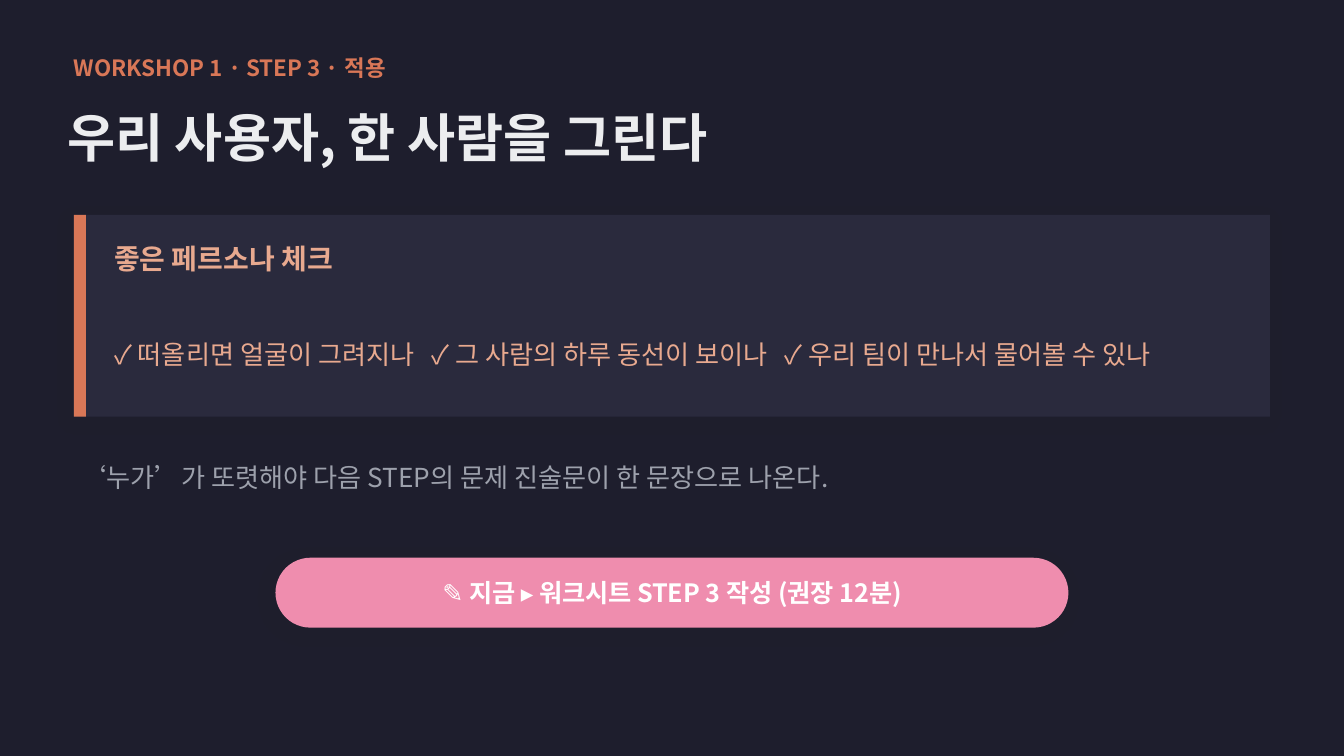
from lxml.etree import SubElement
from pptx import Presentation
from pptx.dml.color import RGBColor
from pptx.enum.shapes import MSO_SHAPE
from pptx.enum.text import MSO_ANCHOR, PP_ALIGN
from pptx.oxml.ns import qn
from pptx.util import Pt

FONT = "Noto Sans CJK KR"
ORANGE, PEACH = "D97757", "E8A98F"
LEFT = 39.6
CARD_TOP, CARD_HEIGHT = 115.2, 108
BUTTON = (147.6, 298.8, 424.8, 37.44)


def add_block(kind, box, color, shadow=False):
    block = slide.shapes.add_shape(kind, *map(Pt, box))
    block.fill.solid()
    block.fill.fore_color.rgb = RGBColor.from_string(color)
    block.line.fill.background()
    block.shadow.inherit = False
    if shadow:
        effects = block._element.spPr.find(qn("a:effectLst"))
        outer = SubElement(effects, qn("a:outerShdw"), blurRad=str(Pt(9)),
                           dist=str(Pt(3)), dir="8100000", rotWithShape="0")
        tint = SubElement(outer, qn("a:srgbClr"), val="20242C")
        SubElement(tint, qn("a:alpha"), val="10000")
    return block


def add_text(box, text, size, color, bold=False, align=PP_ALIGN.LEFT, tabs=()):
    """Add a one-paragraph text box without margins; tabs are stops in points."""
    frame = slide.shapes.add_textbox(*map(Pt, box)).text_frame
    frame.word_wrap = True
    frame.vertical_anchor = MSO_ANCHOR.MIDDLE
    frame.margin_left = frame.margin_top = frame.margin_right = frame.margin_bottom = 0
    paragraph = frame.paragraphs[0]
    paragraph.text = text
    paragraph.alignment = align
    properties = paragraph._p.get_or_add_pPr()
    if tabs:
        stops = SubElement(properties, qn("a:tabLst"))
        for stop in tabs:
            SubElement(stops, qn("a:tab"), pos=str(Pt(stop)), algn="l")
    font = paragraph.font
    font.size, font.bold, font.name = Pt(size), bold, FONT
    font.color.rgb = RGBColor.from_string(color)
    SubElement(properties.find(qn("a:defRPr")), qn("a:ea"), typeface=FONT)
    return paragraph


presentation = Presentation()
presentation.slide_width, presentation.slide_height = Pt(720), Pt(405)
slide = presentation.slides.add_slide(presentation.slide_layouts[6])
slide.background.fill.solid()
slide.background.fill.fore_color.rgb = RGBColor.from_string("1E1E2D")

# Heading
add_text((LEFT, 24.48, 648, 23.04), "WORKSHOP 1 · STEP 3 · 적용", 12, ORANGE, bold=True)
add_text((36, 44.64, 648, 57.6), "우리 사용자, 한 사람을 그린다", 28, "ECEDEF", bold=True)

# Persona check card
add_block(MSO_SHAPE.RECTANGLE, (LEFT, CARD_TOP, 640.8, CARD_HEIGHT), "2A2A3D", shadow=True)
add_block(MSO_SHAPE.RECTANGLE, (LEFT, CARD_TOP, 6.48, CARD_HEIGHT), ORANGE)
add_text((61.2, 123.84, 576, 28.8), "좋은 페르소나 체크", 15, PEACH, bold=True)
checks = ["떠올리면 얼굴이 그려지나", "그 사람의 하루 동선이 보이나", "우리 팀이 만나서 물어볼 수 있나"]
check_line = add_text((61.2, 158.4, 604.8, 57.6), "\t".join(f"✓ {check}" for check in checks),
                      14, PEACH, tabs=(170, 359))
check_line.line_spacing = 1.3

# Takeaway
add_text((43.2, 241.2, 633.6, 28.8),
         "‘누가’가 또렷해야 다음 STEP의 문제 진술문이 한 문장으로 나온다.", 14, "9DA1AC")

# Worksheet call to action
pill = add_block(MSO_SHAPE.ROUNDED_RECTANGLE, BUTTON, "EF8DAE", shadow=True)
pill.adjustments[0] = 0.5
add_text(BUTTON, "✎ 지금 ▸ 워크시트 STEP 3 작성 (권장 12분)", 13.5, "FFFFFF",
         bold=True, align=PP_ALIGN.CENTER)

presentation.save("out.pptx")
